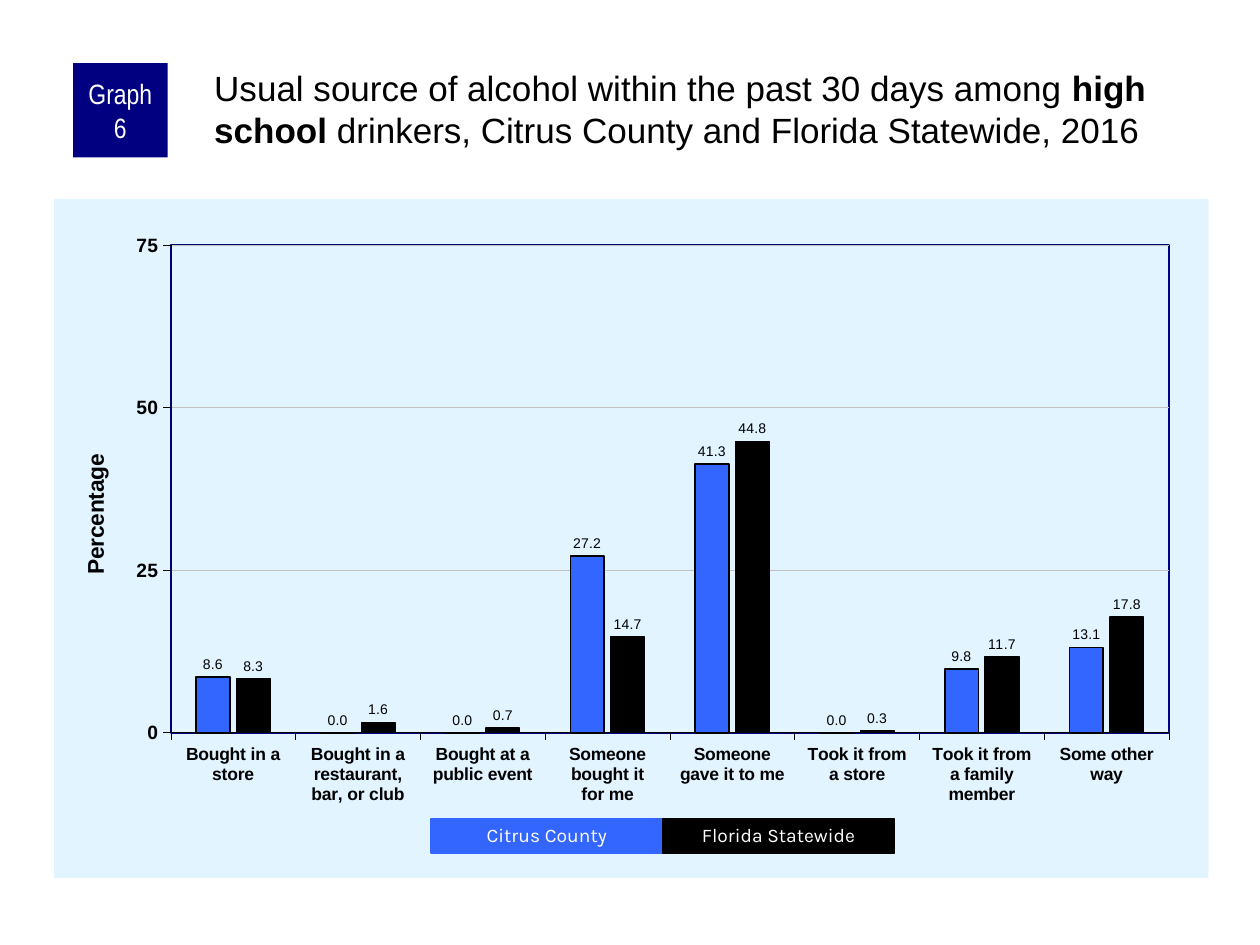
from lxml import etree
from pptx import Presentation
from pptx.chart.data import CategoryChartData
from pptx.dml.color import RGBColor
from pptx.enum.chart import XL_CHART_TYPE, XL_LABEL_POSITION, XL_TICK_MARK
from pptx.enum.shapes import MSO_SHAPE
from pptx.enum.text import MSO_ANCHOR, PP_ALIGN
from pptx.oxml import parse_xml
from pptx.oxml.ns import qn
from pptx.util import Inches, Pt

COLUMN = XL_CHART_TYPE.COLUMN_CLUSTERED
OUT_END = XL_LABEL_POSITION.OUTSIDE_END
TICK_OUT, TICK_NONE = XL_TICK_MARK.OUTSIDE, XL_TICK_MARK.NONE
RECT = MSO_SHAPE.RECTANGLE
MIDDLE, TOP = MSO_ANCHOR.MIDDLE, MSO_ANCHOR.TOP
CENTER, LEFT = PP_ALIGN.CENTER, PP_ALIGN.LEFT

NAVY, BLUE, BLACK, WHITE = "000080", "3366FF", "000000", "FFFFFF"
PALE, GRAY = "E1F4FF", "C0C0C0"
SPACES = ('xmlns:c="http://schemas.openxmlformats.org/drawingml/2006/chart" '
          'xmlns:a="http://schemas.openxmlformats.org/drawingml/2006/main"')

CATS = ["Bought in a store", "Bought in a restaurant, bar, or club",
        "Bought at a public event", "Someone bought it\nfor me",
        "Someone\ngave it to me", "Took it from\na store",
        "Took it from\na family member", "Some other way"]
# name, colour, outline width, values
GROUPS = [
    ("Citrus County", BLUE, 1, (8.6, 0, 0, 27.2, 41.3, 0, 9.8, 13.1)),
    ("Florida Statewide", BLACK, 0.75,
     (8.3, 1.6, 0.7, 14.7, 44.8, 0.3, 11.7, 17.8)),
]


def color(text):
    return RGBColor.from_string(text)


def style(font, size, name="Arial", tint=BLACK, bold=False):
    font.size, font.name, font.bold = Pt(size), name, bold
    font.color.rgb = color(tint)


def draw_line(line, tint, width):
    line.color.rgb = color(tint)
    line.width = Pt(width)


def fill_solid(part, tint):
    part.fill.solid()
    part.fill.fore_color.rgb = color(tint)


def add_rect(slide, box, tint):
    rect = slide.shapes.add_shape(RECT, *map(Inches, box))
    rect.shadow.inherit = False
    fill_solid(rect, tint)
    rect.line.fill.background()
    return rect


def write(shape, runs, size, name, tint, align, anchor, insets):
    """Fill a shape with one paragraph of (text, bold) runs."""
    frame = shape.text_frame
    frame.word_wrap = True
    frame.vertical_anchor = anchor
    (frame.margin_left, frame.margin_top,
     frame.margin_right, frame.margin_bottom) = map(Inches, insets)
    para = frame.paragraphs[0]
    para.alignment = align
    for text, bold in runs:
        run = para.add_run()
        run.text = text
        style(run.font, size, name, tint, bold)
    return para


def set_layout(parent, index, **parts):
    """Fix the place of a chart part, as fractions of the chart."""
    for old in parent.findall(qn("c:layout")):
        parent.remove(old)
    layout = parse_xml(f"<c:layout {SPACES}><c:manualLayout/></c:layout>")
    for tag, value in parts.items():
        etree.SubElement(layout[0], qn("c:" + tag)).set("val", str(value))
    parent.insert(index, layout)


def area(fill, line):
    return parse_xml(f"<c:spPr {SPACES}>{fill}<a:ln w='12700'>{line}</a:ln></c:spPr>")


def paint(tint):
    return f'<a:solidFill><a:srgbClr val="{tint}"/></a:solidFill>'


def style_axis(axis, size):
    axis.major_tick_mark, axis.minor_tick_mark = TICK_OUT, TICK_NONE
    style(axis.tick_labels.font, size, bold=True)
    draw_line(axis.format.line, BLACK, 0.25)


def add_header(slide, box):
    left, top, width, height = box
    # Number badge
    badge = add_rect(slide, (left, top, 0.75, 0.75), NAVY)
    write(badge, [("Graph 6", False)], 16, "Arial Narrow", WHITE,
          CENTER, MIDDLE, (0.05, 0, 0.05, 0))
    # Heading
    shift = 1.09
    head = slide.shapes.add_textbox(
        *map(Inches, (left + shift, top, width - shift, height)))
    runs = [("Usual source of alcohol within the past 30 days among ", False),
            ("high school", True),
            (" drinkers, Citrus County and Florida Statewide, 2016", False)]
    write(head, runs, 20, "Arial", BLACK, LEFT, TOP, (0.03, 0.03, 0, 0))


def add_graph(slide, box):
    data = CategoryChartData(number_format="0.0")
    data.categories = CATS
    for name, _, _, values in GROUPS:
        data.add_series(name, values)
    chart = slide.shapes.add_chart(COLUMN, *map(Inches, box), data).chart
    chart.has_legend = chart.has_title = False
    style(chart.font, 11.5)

    # Columns and their values
    plot = chart.plots[0]
    plot.gap_width, plot.overlap, plot.vary_by_categories = 150, -20, False
    for series, (_, tint, width, _) in zip(plot.series, GROUPS):
        series.invert_if_negative = False
        fill_solid(series.format, tint)
        draw_line(series.format.line, BLACK, width)
        labels = series.data_labels
        labels.show_value, labels.position = True, OUT_END
        labels.number_format, labels.number_format_is_linked = "0.0", False
        style(labels.font, 8)

    # Axes
    style_axis(chart.category_axis, 10)
    axis = chart.value_axis
    style_axis(axis, 11)
    axis.minimum_scale, axis.maximum_scale, axis.major_unit = 0, 75, 25
    axis.tick_labels.number_format = "0"
    axis.tick_labels.number_format_is_linked = False
    draw_line(axis.major_gridlines.format.line, GRAY, 0.25)
    title = axis.axis_title
    run = title.text_frame.paragraphs[0].add_run()
    run.text = "Percentage"
    style(run.font, 13, bold=True)
    turn = title._element.find(".//" + qn("a:bodyPr"))
    turn.set("rot", "-5400000")
    turn.set("vert", "horz")
    set_layout(title._element, 1, xMode="edge", yMode="edge", x=0.02, y=0.37)

    # Plot frame and background
    space = chart._chartSpace
    inner = space.find(".//" + qn("c:plotArea"))
    set_layout(inner, 0, layoutTarget="inner", xMode="edge", yMode="edge",
               x=0.101, y=0.068, w=0.865, h=0.718)
    inner.append(area("<a:noFill/>", paint(NAVY)))
    space.find(qn("c:chart")).addnext(area(paint(PALE), "<a:noFill/>"))


def add_key(slide, box):
    left, top, width, height = box
    step = width / len(GROUPS)
    for i, (name, tint, _, _) in enumerate(GROUPS):
        tag = add_rect(slide, (left + i * step, top, step, height), tint)
        draw_line(tag.line, tint, 0.75)
        para = write(tag, [(name, False)], 11, "Karla", WHITE,
                     CENTER, MIDDLE, (0.1, 0.05, 0.1, 0.05))
        para.line_spacing = 0.9


def main():
    deck = Presentation()
    deck.slide_width, deck.slide_height = Inches(10), Inches(7.5)
    slide = deck.slides.add_slide(deck.slide_layouts[6])
    add_graph(slide, (0.43, 1.58, 9.16, 5.39))
    add_header(slide, (0.58, 0.5, 9.01, 0.83))
    add_key(slide, (3.42, 6.5, 3.68, 0.27))
    deck.save("out.pptx")


if __name__ == "__main__":
    main()
